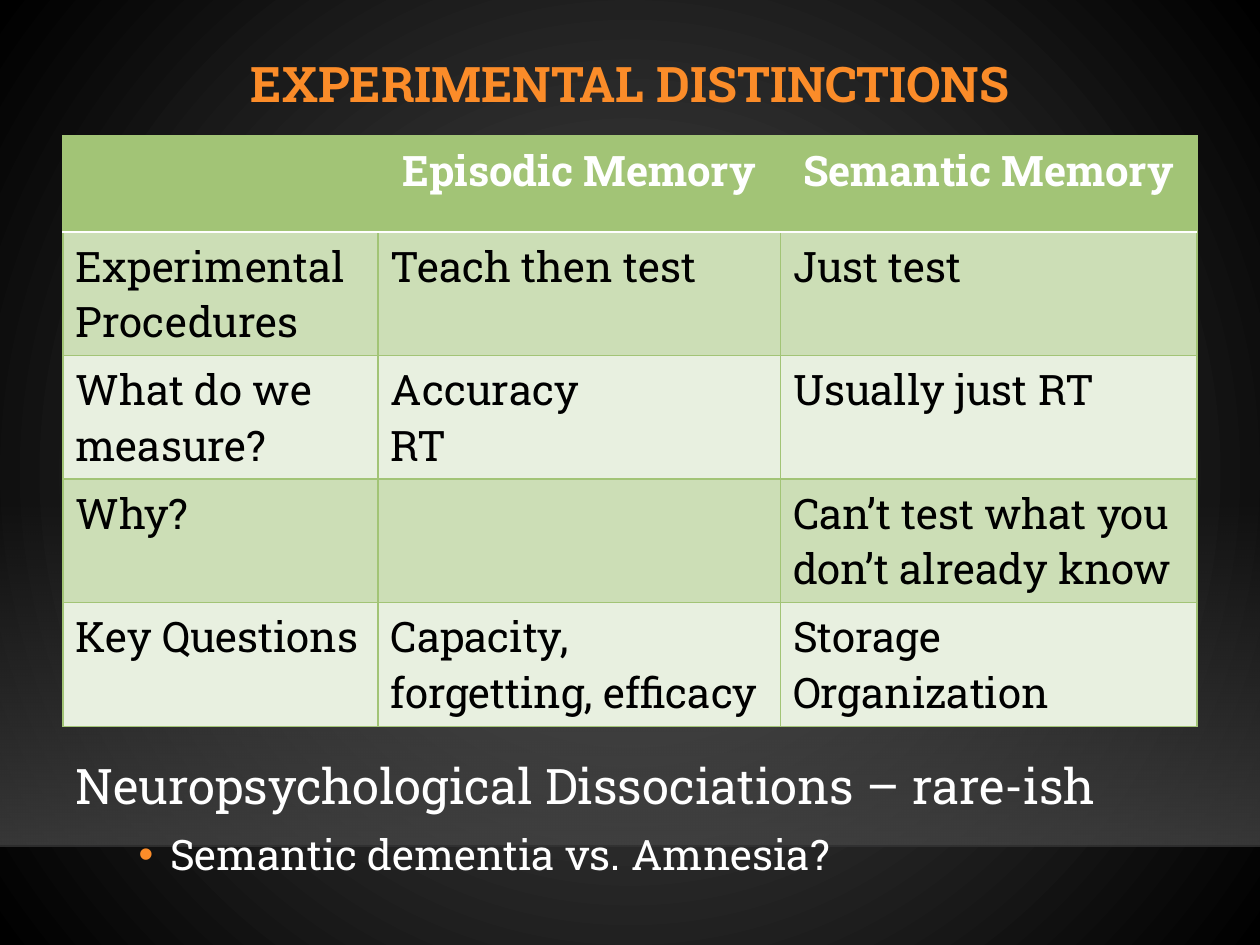
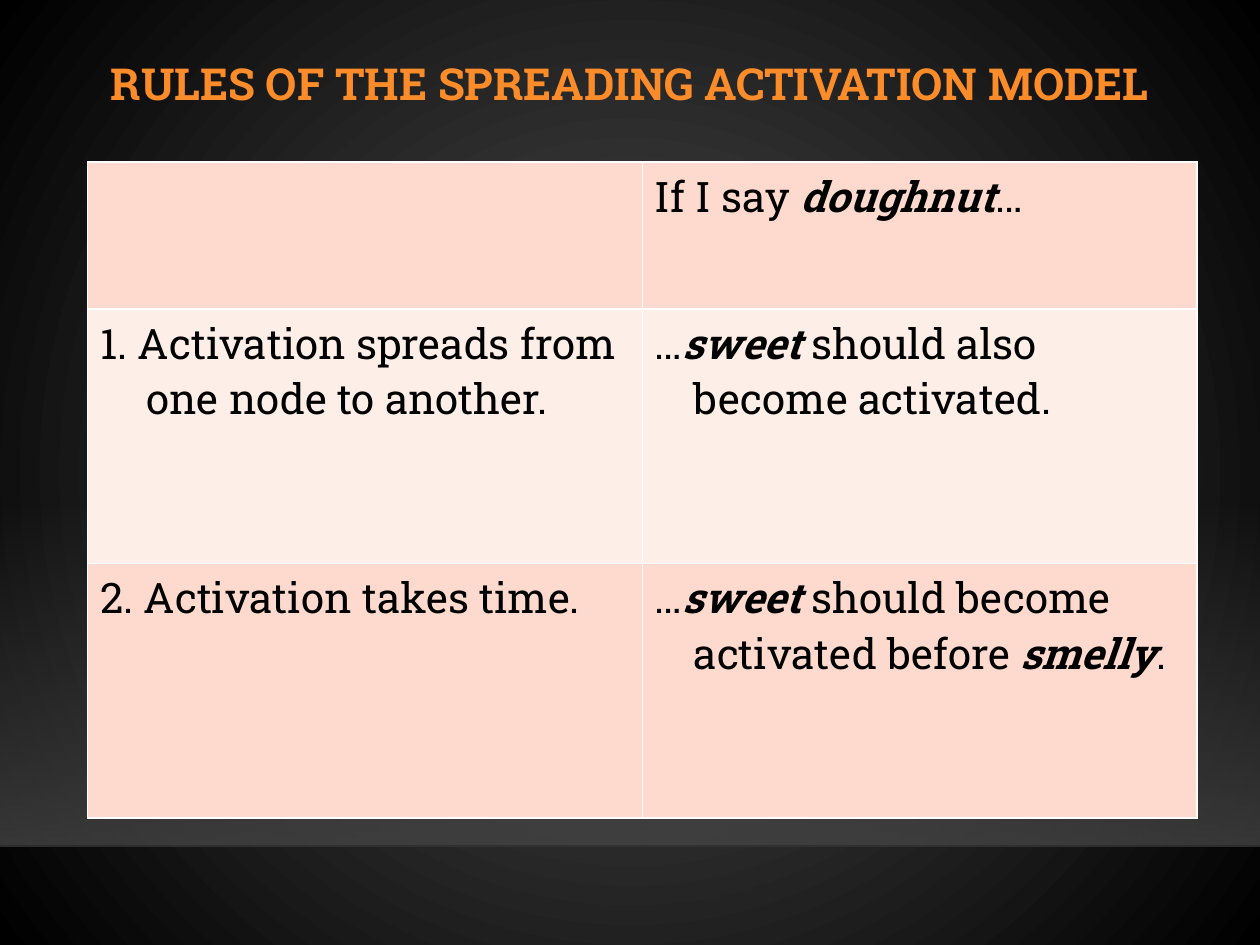
from lxml.etree import SubElement
from pptx import Presentation
from pptx.dml.color import RGBColor
from pptx.enum.shapes import MSO_CONNECTOR, MSO_SHAPE
from pptx.enum.text import MSO_ANCHOR, MSO_AUTO_SIZE, PP_ALIGN
from pptx.oxml import parse_xml
from pptx.oxml.ns import nsdecls, qn
from pptx.util import Pt

FONT = "Roboto Slab"
COLORS = {
    "glow": "505050", "black": "000000", "band": "454545", "rule": "000001",
    "accent": "FB8C29", "white": "FFFFFF",
    "green": "A2C476", "green_mid": "CCDEB6", "green_pale": "E8F0E0",
    "pink": "FDDACD", "pink_pale": "FEEEE8",
}

DISTINCTIONS = {
    "title": "EXPERIMENTAL DISTINCTIONS",
    "title_size": 28,
    "rows": [
        ["", "Episodic Memory", "Semantic Memory"],
        ["Experimental Procedures", "Teach then test", "Just test"],
        ["What do we measure?", "Accuracy\nRT", "Usually just RT"],
        ["Why?", "", "Can’t test what you don’t already know"],
        ["Key Questions", "Capacity, forgetting, efficacy", "Storage\nOrganization"],
    ],
    "at": (36, 77.5),
    "widths": [180, 230, 238],
    "heights": [55] + [70.5] * 4,
    "fills": ["green"] + ["green_mid", "green_pale"] * 2,
    "border": ("green", 0.75),
    "header": True,
    "hanging": [0, 0, 0],
}
DISSOCIATIONS = [
    ("Neuropsychological Dissociations – rare-ish", 0, 28),
    ("Semantic dementia vs. Amnesia?", 1, 24),
]
RULES = {
    "title": "RULES OF THE SPREADING ACTIVATION MODEL",
    "title_size": 25.2,
    "rows": [
        ["", "If I say *doughnut*…"],
        ["1. Activation spreads from one node to another.",
         "…*sweet* should also become activated."],
        ["2. Activation takes time.",
         "…*sweet* should become activated before *smelly*."],
    ],
    "at": (50, 92.5),
    "widths": [317] * 2,
    "heights": [84, 145.5, 145.5],
    "fills": ["pink", "pink_pale", "pink"],
    "border": ("white", 1),
    "header": False,
    "hanging": [26.6, 22.3],
}


def rgb(name):
    return RGBColor.from_string(COLORS[name])


def place(sp, left, top, width, height):
    sp.left, sp.top, sp.width, sp.height = Pt(left), Pt(top), Pt(width), Pt(height)


def style(r, size, color, bold=False, italic=False):
    r.font.name, r.font.size = FONT, Pt(size)
    r.font.bold, r.font.italic = bold, italic
    r.font.color.rgb = rgb(color)


def indent(p, margin, first):
    pPr = p._p.get_or_add_pPr()
    pPr.set("marL", str(Pt(margin)))
    pPr.set("indent", str(Pt(first)))
    return pPr


def set_alpha(parent, percents):
    for clr, percent in zip(parent.iter(qn("a:srgbClr")), percents):
        SubElement(clr, qn("a:alpha")).set("val", str(percent * 1000))


def set_stops(fill, names):
    fill.gradient()
    for stop, name in zip(fill.gradient_stops, names):
        stop.color.rgb = rgb(name)


def set_background(master):
    set_stops(master.background.fill, ["glow", "black"])
    grad = master.element.find(".//" + qn("a:gradFill"))
    grad.replace(grad.find(qn("a:lin")), parse_xml(
        f'<a:path {nsdecls("a")} path="circle">'
        '<a:fillToRect l="50000" t="50000" r="50000" b="50000"/></a:path>'))


def add_floor(slide, master):
    band = slide.shapes.add_shape(MSO_SHAPE.RECTANGLE, 0, Pt(285), Pt(720), Pt(198.5))
    band.shadow.inherit = False
    band.line.fill.background()
    set_stops(band.fill, ["band", "band"])
    band.fill.gradient_angle = 270
    set_alpha(band.element.spPr, [0, 80])

    rule = slide.shapes.add_connector(
        MSO_CONNECTOR.STRAIGHT, 0, Pt(483.5), Pt(720), Pt(483.5))
    rule.line.color.rgb = rgb("rule")
    rule.line.width = Pt(1)
    set_alpha(rule.element.spPr, [20])
    SubElement(rule.element.spPr, qn("a:effectLst"))

    for i, sp in enumerate([band, rule]):
        sp.element.find(".//" + qn("p:cNvPr")).set("id", str(101 + i))
        master.shapes.element.insert(2 + i, sp.element)


def set_title(slide, text, size):
    sp = slide.shapes.title
    place(sp, 36, 21.5, 648, 56)
    tf = sp.text_frame
    tf.text = text
    tf.auto_size = MSO_AUTO_SIZE.NONE
    tf.vertical_anchor = MSO_ANCHOR.MIDDLE
    p = tf.paragraphs[0]
    p.alignment, p.line_spacing = PP_ALIGN.CENTER, 0.9
    style(p.runs[0], size, "accent", bold=True)


def set_border(cell, side, color, width):
    return parse_xml(
        f'<a:{side} {nsdecls("a")} w="{Pt(width)}"><a:solidFill>'
        f'<a:srgbClr val="{COLORS[color]}"/></a:solidFill></a:{side}>')


def fill_cell(cell, text, header, hanging):
    tf = cell.text_frame
    tf.text = text.replace("*", "")
    for p, line in zip(tf.paragraphs, text.split("\n")):
        p.text = ""
        if header:
            p.alignment = PP_ALIGN.CENTER
        if hanging:
            indent(p, hanging, -hanging)
        for i, part in enumerate(line.split("*")):
            if part:
                r = p.add_run()
                r.text = part
                strong = i % 2 == 1
                style(r, 24, "white" if header else "black", header or strong, strong)


def add_grid(slide, data):
    rows, widths, heights = data["rows"], data["widths"], data["heights"]
    left, top = data["at"]
    table = slide.shapes.add_table(
        len(rows), len(widths), Pt(left), Pt(top),
        Pt(sum(widths)), Pt(sum(heights))).table
    table.first_row = data["header"]
    table.horz_banding = False
    for col, width in zip(table.columns, widths):
        col.width = Pt(width)
    for i, row in enumerate(rows):
        table.rows[i].height = Pt(heights[i])
        for j, text in enumerate(row):
            cell = table.cell(i, j)
            header = data["header"] and i == 0
            fill_cell(cell, text, header, data["hanging"][j] if i else 0)
            cell.fill.solid()
            cell.fill.fore_color.rgb = rgb(data["fills"][i])
            borders = dict.fromkeys(["lnL", "lnR", "lnT", "lnB"], data["border"])
            if data["header"] and i < 2:
                borders["lnT" if i else "lnB"] = ("white", 1.25)
            for k, (side, line) in enumerate(borders.items()):
                cell._tc.tcPr.insert(k, set_border(cell, side, *line))


def set_body(slide, items):
    sp = slide.placeholders[1]
    place(sp, 36, 424, 648, 100)
    tf = sp.text_frame
    tf.text = "\n".join(text for text, _, _ in items)
    tf.auto_size = MSO_AUTO_SIZE.NONE
    for p, (_, level, size) in zip(tf.paragraphs, items):
        p.level = level
        p.line_spacing = 1.12
        p.space_before = Pt(5 * level)
        pPr = indent(p, 54 * level, -18 * level)
        if level:
            clr = SubElement(pPr, qn("a:buClr"))
            SubElement(clr, qn("a:srgbClr")).set("val", COLORS["accent"])
            SubElement(pPr, qn("a:buChar")).set("char", "•")
        else:
            SubElement(pPr, qn("a:buNone"))
        style(p.runs[0], size, "white")


def main():
    prs = Presentation()
    prs.slide_width, prs.slide_height = Pt(720), Pt(540)
    master = prs.slide_master
    set_background(master)
    for data, layout in [(DISTINCTIONS, 1), (RULES, 5)]:
        s = prs.slides.add_slide(prs.slide_layouts[layout])
        set_title(s, data["title"], data["title_size"])
        add_grid(s, data)
    first = prs.slides[0]
    set_body(first, DISSOCIATIONS)
    add_floor(first, master)
    prs.save("out.pptx")


if __name__ == "__main__":
    main()
